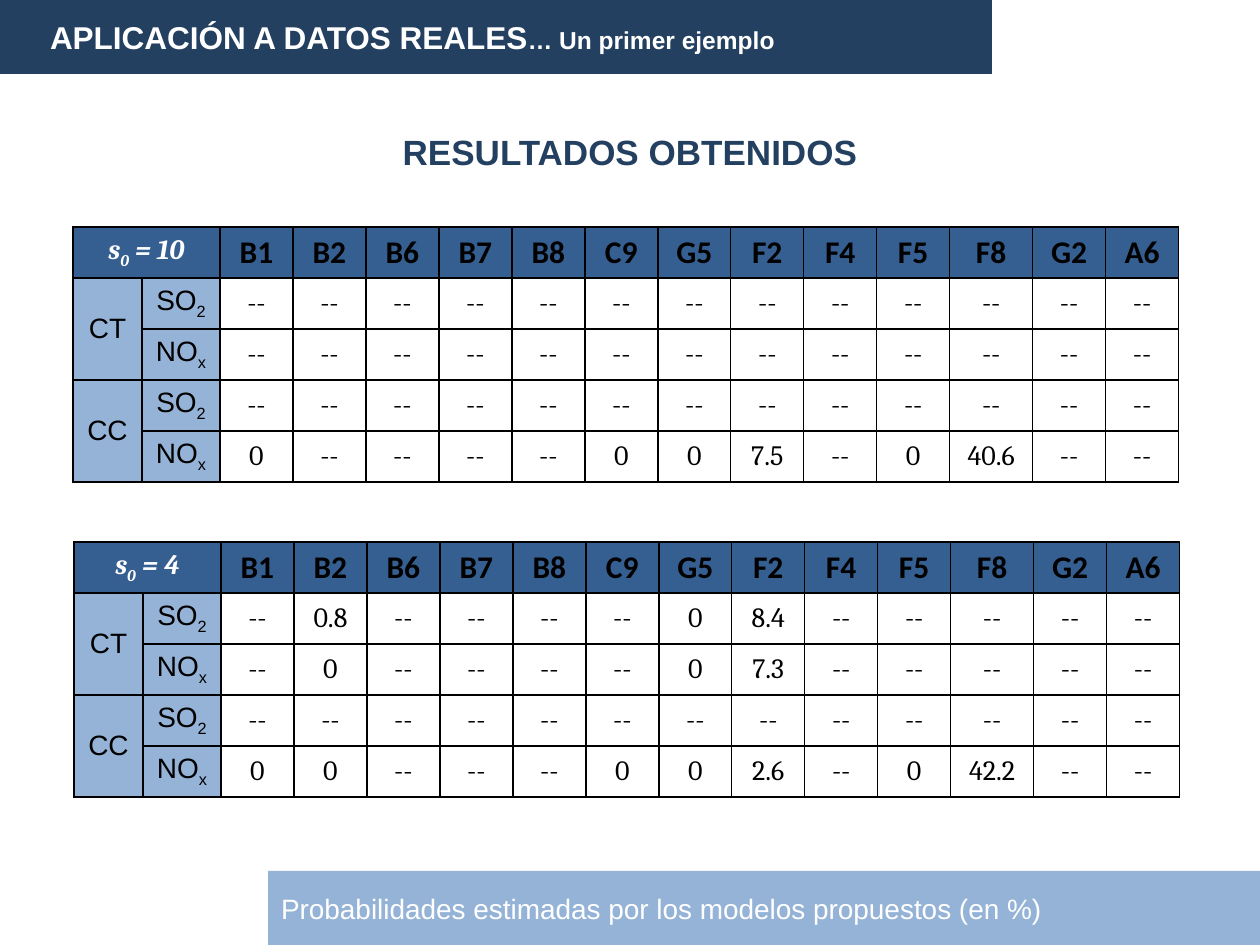
from lxml.etree import SubElement
from pptx import Presentation
from pptx.dml.color import RGBColor
from pptx.enum.shapes import MSO_SHAPE
from pptx.enum.text import MSO_ANCHOR, PP_ALIGN
from pptx.oxml.ns import qn
from pptx.util import Emu, Pt

COLORS = {"navy": "244061", "head": "365F91", "light": "95B3D7",
          "white": "FFFFFF", "black": "000000"}
STATIONS = ["B1", "B2", "B6", "B7", "B8", "C9", "G5",
            "F2", "F4", "F5", "F8", "G2", "A6"]
PLANTS = ["CT", "CC"]
GASES = ["SO_2", "NO_x"]
COLUMNS = [69, 78] + [105 if name == "F8" else 73 for name in STATIONS]
COLUMNS = [69, 78] + [83 if name == "F8" else 73 for name in STATIONS]
ROW_HEIGHT = 51
RESULTS_10 = {("CC", "NO_x"): {"B1": "0", "C9": "0", "G5": "0", "F2": "7.5",
                               "F5": "0", "F8": "40.6"}}
RESULTS_4 = {("CT", "SO_2"): {"B2": "0.8", "G5": "0", "F2": "8.4"},
             ("CT", "NO_x"): {"B2": "0", "G5": "0", "F2": "7.3"},
             ("CC", "NO_x"): {"B1": "0", "B2": "0", "C9": "0", "G5": "0",
                              "F2": "2.6", "F5": "0", "F8": "42.2"}}


def px(n):
    """Turn pixels into EMU."""
    return Emu(round(n * 914400 / 126))


def rgb(name):
    """Look up a named colour."""
    return RGBColor.from_string(COLORS[name])


def add_text(p, text, size=16, font="Arial", color="black", bold=False, italic=False):
    """Add text to a paragraph; parts between underscores are subscripts."""
    for i, part in enumerate(text.split("_")):
        r = p.add_run()
        r.text = part
        r.font.size = Pt(size)
        r.font.name = font
        r.font.bold = bold
        r.font.italic = italic
        r.font.color.rgb = rgb(color)
        if i % 2:
            r.font._element.set("baseline", "-25000")


def add_bar(s, x, y, w, h, fill, inset):
    """Add a filled bar and return its paragraph."""
    sp = s.shapes.add_shape(MSO_SHAPE.RECTANGLE, px(x), px(y), px(w), px(h))
    sp.shadow.inherit = False
    sp.fill.solid()
    sp.fill.fore_color.rgb = rgb(fill)
    sp.line.fill.background()
    tf = sp.text_frame
    tf.word_wrap = True
    tf.vertical_anchor = MSO_ANCHOR.MIDDLE
    tf.margin_left = px(inset)
    p = tf.paragraphs[0]
    p.alignment = PP_ALIGN.LEFT
    return p


def add_heading(s, text, x, y, w, h):
    """Add the centred heading."""
    tf = s.shapes.add_textbox(px(x), px(y), px(w), px(h)).text_frame
    tf.word_wrap = True
    p = tf.paragraphs[0]
    p.alignment = PP_ALIGN.CENTER
    add_text(p, text, size=20, color="navy", bold=True)


def add_borders(cell):
    """Draw a thin black line on each side of a cell."""
    tc_pr = cell._tc.get_or_add_tcPr()
    for side in ("a:lnL", "a:lnR", "a:lnT", "a:lnB"):
        ln = SubElement(tc_pr, qn(side), w=str(Pt(1)))
        fill = SubElement(ln, qn("a:solidFill"))
        SubElement(fill, qn("a:srgbClr"), val=COLORS["black"])


def fill_cell(cell, text, fill=None, **fmt):
    """Write centred text in a cell and set its fill."""
    cell.vertical_anchor = MSO_ANCHOR.MIDDLE
    if fill:
        cell.fill.solid()
        cell.fill.fore_color.rgb = rgb(fill)
    else:
        cell.fill.background()
    p = cell.text_frame.paragraphs[0]
    p.alignment = PP_ALIGN.CENTER
    add_text(p, text, **fmt)


def add_results(s, x, y, title, results):
    """Add a table of probabilities by plant, gas and station."""
    rows = 1 + len(PLANTS) * len(GASES)
    table = s.shapes.add_table(rows, len(COLUMNS), px(x), px(y),
                               px(sum(COLUMNS)), px(rows * ROW_HEIGHT)).table
    table.horz_banding = False
    for column, width in zip(table.columns, COLUMNS):
        column.width = px(width)
    for row in table.rows:
        row.height = px(ROW_HEIGHT)
    for cell in table.iter_cells():
        add_borders(cell)

    table.cell(0, 0).merge(table.cell(0, 1))
    fill_cell(table.cell(0, 0), title, "head", font="Cambria",
              color="white", bold=True, italic=True)
    for col, station in enumerate(STATIONS, 2):
        fill_cell(table.cell(0, col), station, "head",
                  size=18, font="Calibri", bold=True)
    for i, plant in enumerate(PLANTS):
        top = 1 + i * len(GASES)
        table.cell(top, 0).merge(table.cell(top + len(GASES) - 1, 0))
        fill_cell(table.cell(top, 0), plant, "light")
        for row, gas in enumerate(GASES, top):
            fill_cell(table.cell(row, 1), gas, "light")
            values = results.get((plant, gas), {})
            for col, station in enumerate(STATIONS, 2):
                fill_cell(table.cell(row, col), values.get(station, "--"),
                          font="Cambria")


def main():
    """Build the slide and save it."""
    prs = Presentation()
    prs.slide_width, prs.slide_height = px(1260), px(945)
    s = prs.slides.add_slide(prs.slide_layouts[6])
    p = add_bar(s, 0, 0, 992, 74, "navy", 50)
    add_text(p, "APLICACIÓN A DATOS REALES", size=18, color="white", bold=True)
    add_text(p, "… Un primer ejemplo", size=14, color="white", bold=True)
    p = add_bar(s, 268, 871, 992, 74, "light", 13)
    add_text(p, "Probabilidades estimadas por los modelos propuestos (en %)",
             color="white")
    add_heading(s, "RESULTADOS OBTENIDOS", 50, 124, 1160, 697)
    add_results(s, 73, 227, "s_0_ = 10", RESULTS_10)
    add_results(s, 74, 542, "s_0_ = 4", RESULTS_4)
    prs.save("out.pptx")


if __name__ == "__main__":
    main()
